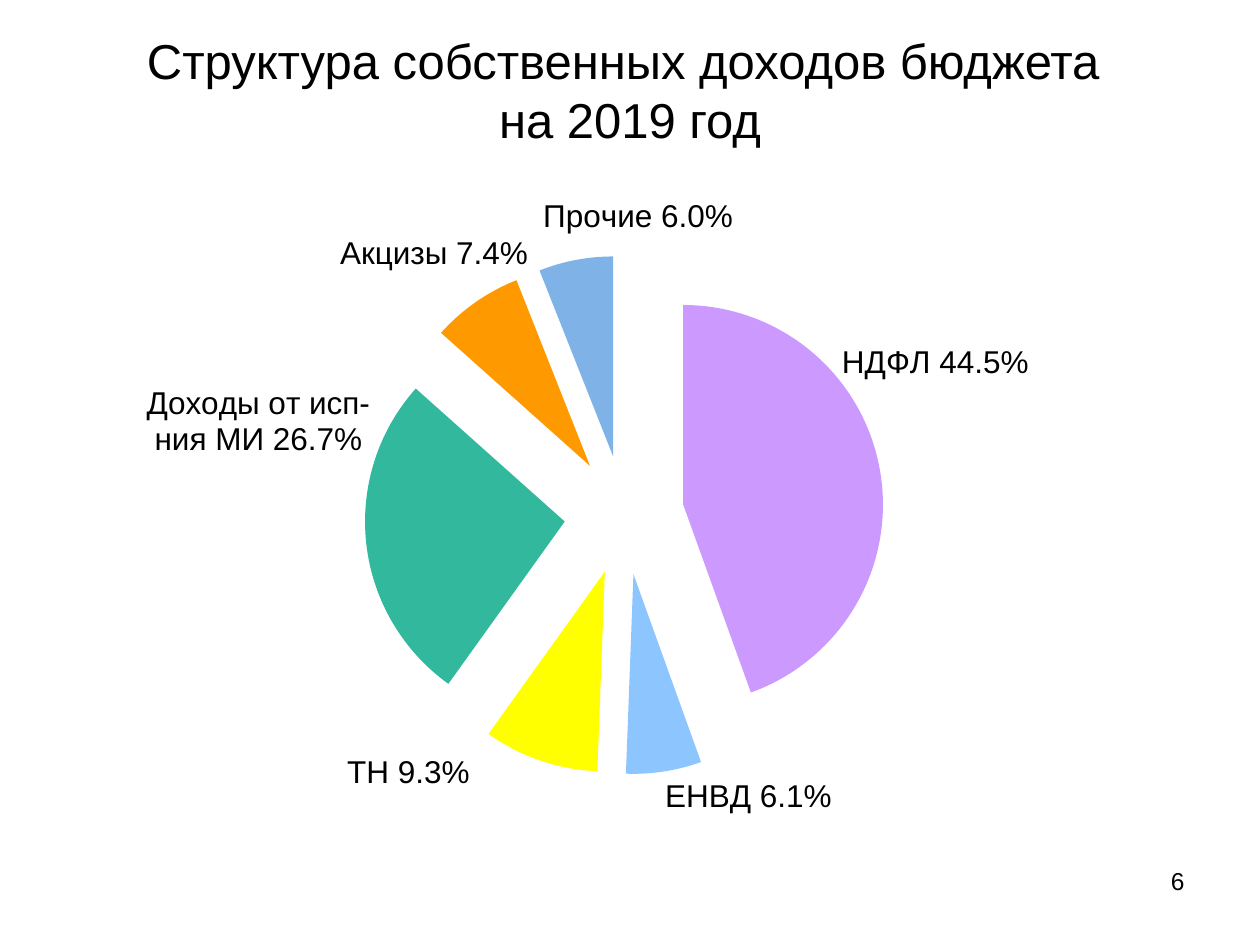
from dataclasses import dataclass
from typing import Any

from lxml import etree
from pptx import Presentation
from pptx.chart.data import CategoryChartData
from pptx.dml.color import RGBColor
from pptx.enum.chart import XL_CHART_TYPE, XL_LABEL_POSITION
from pptx.enum.text import MSO_ANCHOR, PP_ALIGN
from pptx.oxml import parse_xml
from pptx.oxml.ns import nsdecls, qn
from pptx.util import Inches, Pt

PIE = XL_CHART_TYPE.PIE
OUTSIDE = XL_LABEL_POSITION.OUTSIDE_END
CENTER, RIGHT = PP_ALIGN.CENTER, PP_ALIGN.RIGHT
TOP, MIDDLE = MSO_ANCHOR.TOP, MSO_ANCHOR.MIDDLE

C15 = "http://schemas.microsoft.com/office/drawing/2012/chart"
LABEL_EXT = "{CE6537A1-D6FC-4f65-9D91-7224C49458BB}"

BLACK = RGBColor(0x00, 0x00, 0x00)
LILAC = RGBColor(0xCC, 0x99, 0xFF)
SKY = RGBColor(0x8D, 0xC6, 0xFF)
YELLOW = RGBColor(0xFF, 0xFF, 0x00)
TEAL = RGBColor(0x32, 0xB8, 0x9C)
ORANGE = RGBColor(0xFF, 0x99, 0x00)
BLUE = RGBColor(0x7F, 0xB3, 0xE7)

WIDTH, HEIGHT = Inches(10), Inches(7.5)

# category, percent, colour, label shift and label size (shares of the chart)
INCOME = [
    ("НДФЛ", 44.5, LILAC, (-0.04, -0.14), None),
    ("ЕНВД", 6.1, SKY, (0, 0), None),
    ("ТН", 9.3, YELLOW, (-0.06, -0.02), None),
    ("Доходы от исп-ния МИ", 26.7, TEAL, (0.01, -0.25), (0.16, 0.17)),
    ("Акцизы", 7.4, ORANGE, (0.05, -0.04), None),
    ("Прочие", 6.0, BLUE, (0.14, -0.04), None),
]


def write(tf, text, size, font, color=BLACK, align=CENTER):
    """Fill the first paragraph; a newline becomes a line break."""
    p = tf.paragraphs[0]
    p.alignment = align
    for i, line in enumerate(text.split("\n")):
        if i:
            p.add_line_break()
        r = p.add_run()
        r.text = line
        r.font.size, r.font.name = Pt(size), font
        r.font.color.rgb = color


def manual_layout(x, y, w=None, h=None):
    """Layout in shares of the chart; without a size it is a label shift."""
    parts = [("x", x), ("y", y)]
    if w is not None:
        parts = [("layoutTarget", "inner"), ("xMode", "edge"),
                 ("yMode", "edge"), *parts, ("w", w), ("h", h)]
    body = "".join(f'<c:{tag} val="{val}"/>' for tag, val in parts)
    return parse_xml(f'<c:layout {nsdecls("c")}><c:manualLayout>{body}'
                     "</c:manualLayout></c:layout>")


def label_size(w, h):
    """Extension that fixes the width at which a label wraps."""
    return parse_xml(
        f'<c:extLst {nsdecls("c")}><c:ext uri="{LABEL_EXT}" xmlns:c15="{C15}">'
        f'<c15:layout><c:manualLayout><c:w val="{w}"/><c:h val="{h}"/>'
        "</c:manualLayout></c15:layout></c:ext></c:extLst>")


def add_separator(labels):
    etree.SubElement(labels, qn("c:separator")).text = " "


def point_label(idx, shift, size):
    flags = "".join(
        f'<c:show{name} val="{int(name in ("CatName", "Percent"))}"/>'
        for name in ("LegendKey", "Val", "CatName", "SerName", "Percent",
                     "BubbleSize"))
    label = parse_xml(f'<c:dLbl {nsdecls("c")}><c:idx val="{idx}"/>'
                      '<c:numFmt formatCode="0.0%" sourceLinked="0"/>'
                      f'<c:dLblPos val="outEnd"/>{flags}</c:dLbl>')
    label.insert(1, manual_layout(*shift))
    add_separator(label)
    if size:
        label.append(label_size(*size))
    return label


@dataclass
class Deck:
    slide: Any
    font: str = "Arial"

    def box(self, x, y, w, h):
        """Shares of the slide's size to lengths."""
        return (round(x * WIDTH), round(y * HEIGHT),
                round(w * WIDTH), round(h * HEIGHT))

    def text(self, text, at, size, align=CENTER, anchor=TOP):
        tf = self.slide.shapes.add_textbox(*self.box(*at)).text_frame
        tf.word_wrap = True
        tf.vertical_anchor = anchor
        write(tf, text, size, self.font, align=align)

    def exploded_pie(self, rows, at, plot_area, size, explosion):
        data = CategoryChartData(number_format="0.0")
        data.categories = [row[0] for row in rows]
        data.add_series("Series 1", [row[1] for row in rows])
        chart = self.slide.shapes.add_chart(PIE, *self.box(*at), data).chart
        chart.has_legend = chart.has_title = False
        chart.font.size, chart.font.name = Pt(size), self.font
        chart.font.color.rgb = BLACK

        area = chart.plots[0]._element.getparent()
        for old in area.findall(qn("c:layout")):
            area.remove(old)
        area.insert(0, manual_layout(*plot_area))

        chart.plots[0].vary_by_categories = True
        series = chart.plots[0].series[0]
        labels = series.data_labels
        labels.show_value = False
        labels.show_category_name = labels.show_percentage = True
        labels.number_format = "0.0%"
        labels.number_format_is_linked = False
        labels.position = OUTSIDE
        leader = qn("c:showLeaderLines")
        for old in labels._element.findall(leader):
            labels._element.remove(old)
        add_separator(labels._element)
        etree.SubElement(labels._element, leader).set("val", "0")

        for i, (_, _, color, shift, wrap) in enumerate(rows):
            fmt = series.points[i].format
            fmt.fill.solid()
            fmt.fill.fore_color.rgb = color
            fmt.line.fill.background()
            labels._element.insert(i, point_label(i, shift, wrap))
        exploded = parse_xml(
            f'<c:explosion {nsdecls("c")} val="{explosion}"/>')
        series._element.find(qn("c:dPt")).addprevious(exploded)


def main():
    prs = Presentation()
    prs.slide_width, prs.slide_height = WIDTH, HEIGHT
    deck = Deck(prs.slides.add_slide(prs.slide_layouts[6]))
    deck.text("Структура собственных доходов бюджета \nна 2019 год",
              (0.05, 0.04, 0.9, 0.11), 28, anchor=MIDDLE)
    deck.exploded_pie(INCOME, (0.05, 0.21, 0.9, 0.67),
                      (0.26, 0.09, 0.47, 0.82), 18, 30)
    deck.text("6", (0.72, 0.91, 0.23, 0.07), 14, align=RIGHT)
    prs.save("out.pptx")


if __name__ == "__main__":
    main()
